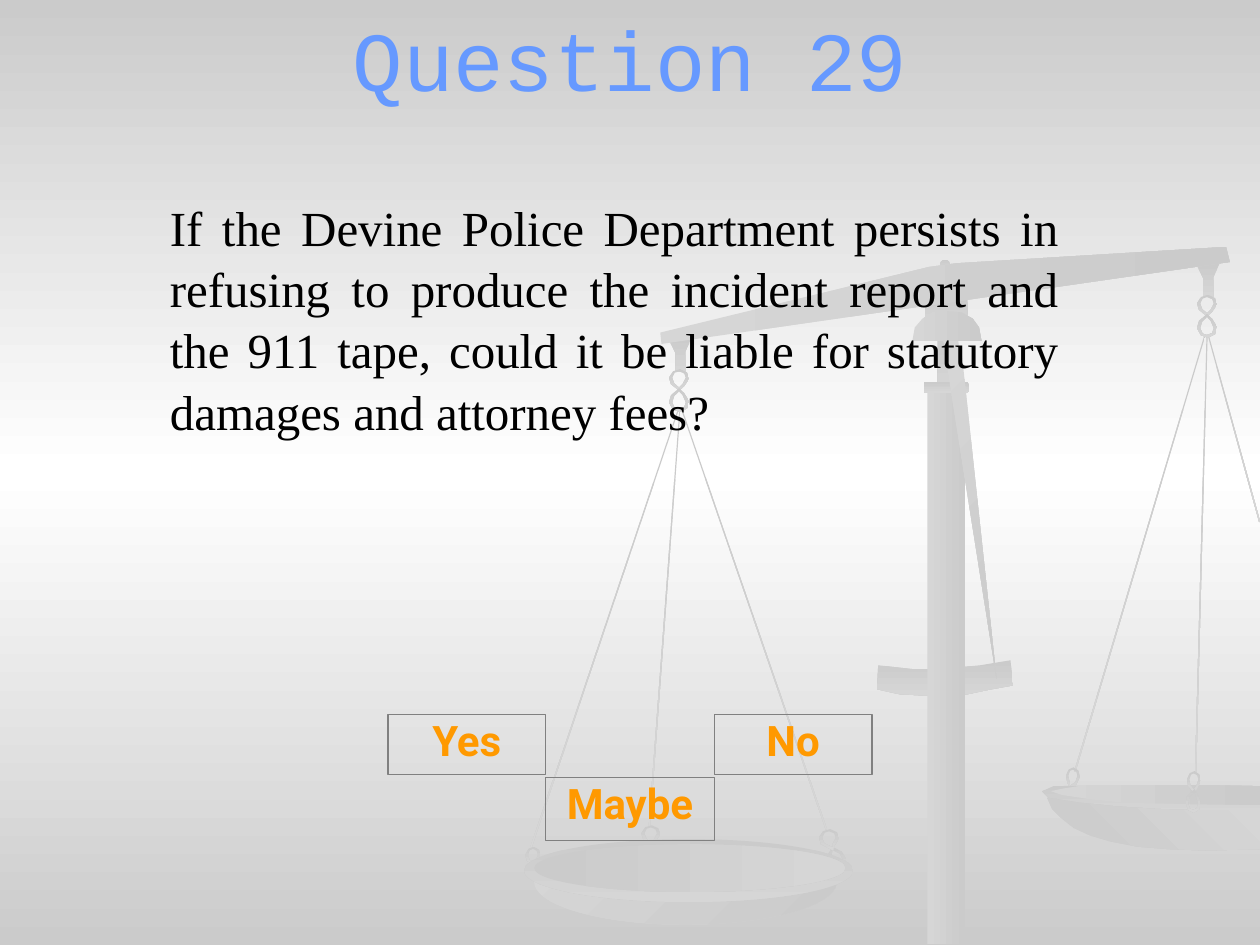
from copy import deepcopy

from pptx import Presentation
from pptx.dml.color import RGBColor
from pptx.enum.shapes import MSO_SHAPE
from pptx.enum.text import MSO_ANCHOR, PP_ALIGN
from pptx.oxml.ns import qn
from pptx.util import Cm, Pt

RECTANGLE = MSO_SHAPE.RECTANGLE
ROUNDED = MSO_SHAPE.ROUNDED_RECTANGLE
ELLIPSE = MSO_SHAPE.OVAL
CENTER, JUSTIFY = PP_ALIGN.CENTER, PP_ALIGN.JUSTIFY
TOP, MIDDLE = MSO_ANCHOR.TOP, MSO_ANCHOR.MIDDLE

DARK = RGBColor(0xCB, 0xCB, 0xCB)
LIGHT = RGBColor(0xD6, 0xD6, 0xD6)
WHITE = RGBColor(0xFF, 0xFF, 0xFF)
BLACK = RGBColor(0x00, 0x00, 0x00)
BLUE = RGBColor(0x66, 0x99, 0xFF)
ORANGE = RGBColor(0xFF, 0x99, 0x00)
GRAY = RGBColor(0x80, 0x80, 0x80)


def grid(value):
    """Length of a layout measure, whose unit is 2.54 cm."""
    return Cm(2.54 * value)


class ScalesSlide:
    title_font, body_font, button_font = "Courier New", "Times New Roman", "Roboto"

    def __init__(self, presentation):
        self.slide = presentation.slides.add_slide(presentation.slide_layouts[6])
        self.shapes = self.slide.shapes

    def background(self):
        fill = self.slide.background.fill
        fill.gradient()
        fill.gradient_angle = 270
        stops = self.slide.element.find(".//" + qn("a:gsLst"))
        middle = deepcopy(stops[0])
        middle.set("pos", "50000")
        stops.insert(1, middle)
        for stop, color in zip(fill.gradient_stops, (DARK, WHITE, DARK)):
            stop.color.rgb = color

    def shade(self, shape, angle, colors):
        shape.shadow.inherit = False
        shape.line.fill.background()
        shape.fill.gradient()
        shape.fill.gradient_angle = (360 - angle) % 360
        for stop, color in zip(shape.fill.gradient_stops, colors):
            stop.color.rgb = color

    def solid(self, kind, box, angle=90, colors=(DARK, LIGHT), rotation=0):
        shape = self.shapes.add_shape(kind, *map(grid, box))
        shape.rotation = rotation
        self.shade(shape, angle, colors)

    def outline(self, *contours, angle=90, colors=(DARK, LIGHT)):
        builder = None
        for contour in contours:
            start, *others = [(grid(x), grid(y)) for x, y in contour]
            if builder is None:
                builder = self.shapes.build_freeform(*start)
            else:
                builder.move_to(*start)
            builder.add_line_segments(others, close=True)
        self.shade(builder.convert_to_shape(), angle, colors)

    def ring(self, left, top, width, height, tip=0.5, tip_up=False):
        outer = [(tip, 1), (0.75, 0.8), (1, 0.45), (0.9, 0.15),
                 (0.55, 0), (0.2, 0.1), (0, 0.4), (0.1, 0.7)]
        inner = [(tip, 0.86), (0.68, 0.7), (0.84, 0.4), (0.76, 0.2),
                 (0.5, 0.11), (0.28, 0.17), (0.16, 0.4), (0.26, 0.67)]
        self.outline(*[
            [(left + x * width, top + (1 - y if tip_up else y) * height) for x, y in contour]
            for contour in (outer, inner)
        ])

    def add_words(self, shape, text, font, size, color, align, anchor=TOP,
                  bold=False, before=0, spacing=None):
        frame = shape.text_frame
        frame.word_wrap = True
        frame.vertical_anchor = anchor
        paragraph = frame.paragraphs[0]
        paragraph.alignment = align
        paragraph.space_before = Pt(before)
        paragraph.line_spacing = spacing
        run = paragraph.add_run()
        run.text = text
        run.font.name, run.font.size, run.font.bold = font, Pt(size), bold
        run.font.color.rgb = color

    def text(self, box, *content, **style):
        self.add_words(self.shapes.add_textbox(*map(grid, box)), *content, **style)

    def button(self, box, label):
        shape = self.shapes.add_shape(RECTANGLE, *map(grid, box))
        shape.shadow.inherit = False
        shape.fill.background()
        shape.line.color.rgb = GRAY
        shape.line.width = Pt(0.75)
        self.add_words(shape, label, self.button_font, 24, ORANGE, CENTER,
                       bold=True, before=4.8, spacing=0.9)


def draw_scales(page):
    reverse = (LIGHT, DARK)

    # Pivot and strings
    page.solid(RECTANGLE, (7.34, 2.37, 0.34, 0.18))
    page.solid(ELLIPSE, (7.46, 2.06, 0.08, 0.08))
    for left, top, height, rotation in (
        (9.04, 2.6, 3.6, 16.6), (9.53, 2.66, 3.47, 1.5), (9.79, 2.64, 1.53, 344.6),
        (5.98, 3.15, 3.53, 341), (4.79, 3.16, 3.68, 18.6), (5.27, 3.25, 3.31, 4.2),
    ):
        page.solid(RECTANGLE, (left, top, 0.01, height), rotation=rotation)
    page.ring(8.46, 6.09, 0.11, 0.17, tip=0.3)

    # Cross piece
    page.outline([(6.97, 5.28), (7.24, 5.31), (7.39, 5.31), (7.57, 5.3), (7.78, 5.28),
                  (8.02, 5.24), (8.04, 5.44), (7.82, 5.48), (7.68, 5.51), (7.51, 5.52),
                  (7.33, 5.52), (7.14, 5.51), (6.96, 5.47)])

    # Right pan: rim, bowl, inside
    page.outline([(10, 6.26), (9.8, 6.26), (9.58, 6.24), (8.85, 6.23), (8.36, 6.24),
                  (8.27, 6.28), (8.32, 6.33), (8.52, 6.38), (8.94, 6.42), (9.35, 6.44),
                  (10, 6.45)])
    page.outline([(8.31, 6.33), (8.35, 6.42), (8.42, 6.49), (8.52, 6.57), (8.65, 6.63),
                  (8.82, 6.68), (9.03, 6.72), (9.28, 6.74), (9.57, 6.75), (10, 6.74),
                  (10, 6.43), (9.53, 6.43), (9.18, 6.42), (8.86, 6.4), (8.57, 6.37)],
                 angle=315)
    page.outline([(10, 6.24), (9.56, 6.23), (8.62, 6.23), (8.43, 6.26), (8.34, 6.28),
                  (8.43, 6.31), (8.63, 6.34), (8.93, 6.37), (9.33, 6.38), (10, 6.39)],
                 angle=0, colors=reverse)

    # Hangers at both ends of the beam
    for left, top in ((5.31, 2.68), (9.5, 2.09)):
        page.outline([(left + x, top + y) for x, y in (
            (0.18, 0), (0, 0.02), (0.05, 0.12), (0.05, 0.27), (0.13, 0.27), (0.13, 0.11))])
        page.ring(left, top + 0.25, 0.16, 0.17)
        page.ring(left, top + 0.4, 0.16, 0.19, tip_up=True)
    page.ring(9.42, 6.12, 0.11, 0.17)

    # Beam
    page.outline([(9.73, 1.96), (9.76, 2.08), (5.25, 2.73), (5.24, 2.64),
                  (7.37, 2.12), (7.59, 2.09)], angle=0, colors=reverse)

    # Left pan and its rings
    page.ring(5.09, 6.55, 0.15, 0.16)
    page.ring(6.56, 6.72, 0.16, 0.19, tip=0.3, tip_up=True)
    page.ring(4.17, 6.72, 0.12, 0.16, tip=0.95)
    page.solid(ELLIPSE, (4.24, 6.66, 2.4, 0.68), 45, reverse)
    page.solid(ELLIPSE, (4.16, 6.66, 2.61, 0.5))
    page.solid(ELLIPSE, (4.24, 6.7, 2.47, 0.38), 0)
    page.ring(6.5, 6.58, 0.16, 0.17, tip=0.7)
    page.ring(9.41, 6.26, 0.12, 0.19, tip=0.6, tip_up=True)

    # Column, brace and cap
    page.solid(RECTANGLE, (7.36, 3.08, 0.3, 4.41), 0, reverse)
    page.solid(RECTANGLE, (7.44, 2.68, 0.13, 0.42))
    page.solid(ROUNDED, (7.33, 3.03, 0.36, 0.09))
    page.outline([(7.91, 5.39), (7.5, 2.8), (7.5, 2.76), (7.48, 2.68), (7.6, 2.65),
                  (7.61, 2.74), (7.63, 2.77)], angle=45, colors=reverse)
    page.outline([(7.52, 2.47), (7.63, 2.48), (7.72, 2.53), (7.77, 2.6), (7.79, 2.71),
                  (7.24, 2.71), (7.26, 2.6), (7.32, 2.53), (7.4, 2.48)],
                 angle=0, colors=reverse)


def main():
    presentation = Presentation()
    presentation.slide_width, presentation.slide_height = grid(10), grid(7.5)
    page = ScalesSlide(presentation)
    page.background()
    draw_scales(page)

    # Question
    page.text((1.25, 1.5, 7.25, 2.92),
              "If the Devine Police Department persists in refusing to produce the incident "
              "report and the 911 tape, could it be liable for statutory damages and "
              "attorney fees?",
              page.body_font, 28, BLACK, JUSTIFY, before=5.6, spacing=1.04)
    page.text((0.5, 0, 9, 0.92), "Question 29", page.title_font, 48, BLUE, CENTER,
              anchor=MIDDLE)

    # Answers, side by side with the middle one lower
    left = 3.08
    for label, top, width, height in (
        ("Yes", 5.67, 1.25, 0.48), ("Maybe", 6.17, 1.34, 0.5), ("No", 5.67, 1.25, 0.48),
    ):
        page.button((left, top, width, height), label)
        left += width

    presentation.save("out.pptx")


if __name__ == "__main__":
    main()
